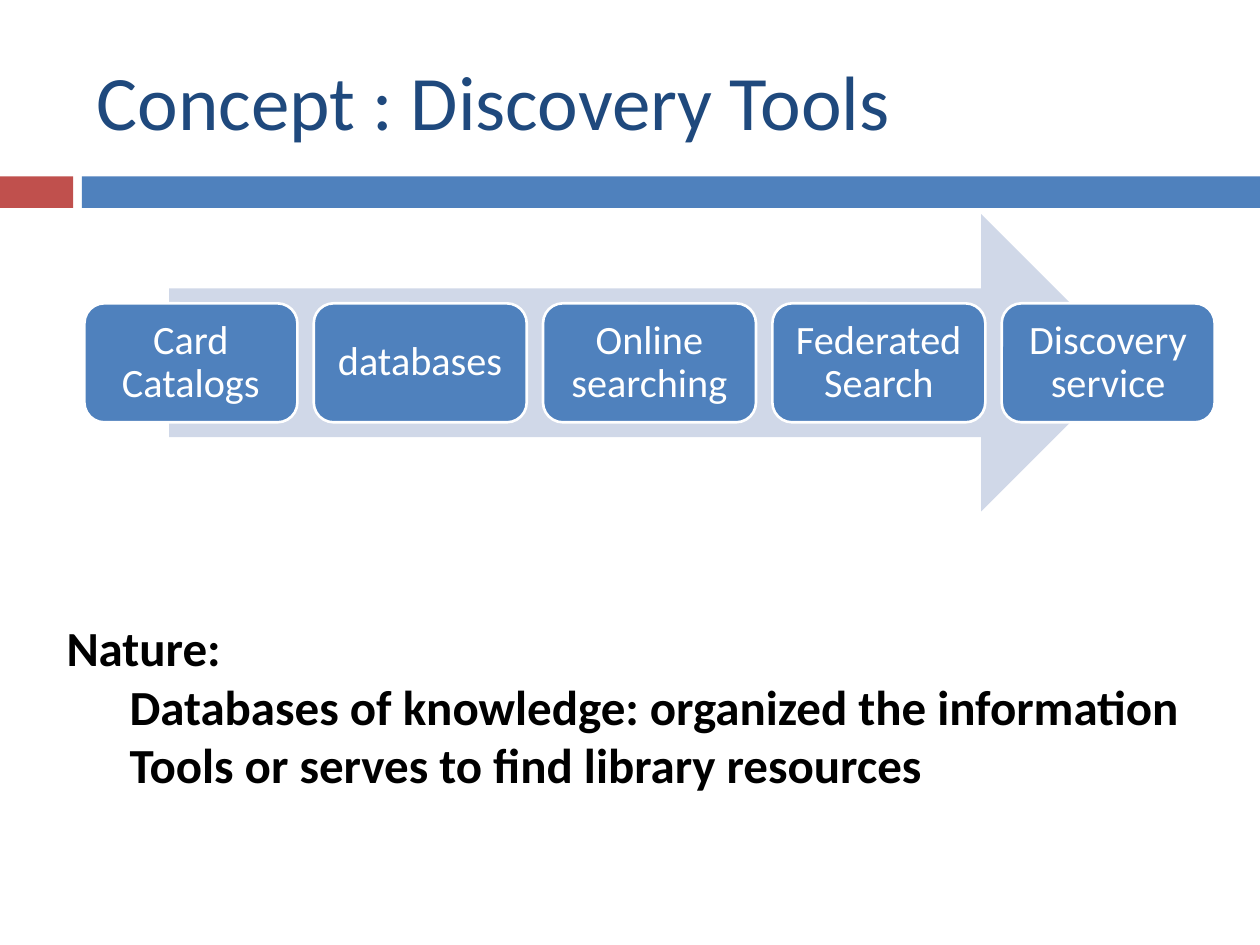
import dataclasses

import pptx
import pptx.dml.color
import pptx.enum.shapes
import pptx.enum.text
import pptx.util

Inches = pptx.util.Inches
SHAPE = pptx.enum.shapes.MSO_SHAPE
ALIGN = pptx.enum.text.PP_ALIGN
ANCHOR = pptx.enum.text.MSO_ANCHOR


@dataclasses.dataclass(frozen=True)
class Theme:
    font: str = "Calibri"
    heading: str = "1F497D"
    accent: str = "C0504D"
    primary: str = "4F81BD"
    arrow: str = "D0D8E8"
    light: str = "FFFFFF"
    body: str = "000000"
    title_size: int = 44
    stage_size: int = 23
    body_size: int = 28
    outline: float = 1.5


THEME = Theme()
WIDTH, HEIGHT = 10, 7.5
STAGES = ["Card Catalogs", "databases", "Online searching",
          "Federated Search", "Discovery service"]
NATURE = [
    ("Nature:", 0),
    ("Databases of knowledge: organized the information", 1),
    ("Tools or serves to find library resources", 1),
]


def rgb(value):
    return pptx.dml.color.RGBColor.from_string(value)


def apply(target, formats):
    for name, value in formats.items():
        setattr(target, name, value)


def add_block(slide, preset, box, fill, outline=None):
    block = slide.shapes.add_shape(preset, *map(Inches, box))
    block.shadow.inherit = False
    block.fill.solid()
    block.fill.fore_color.rgb = rgb(fill)
    if outline:
        block.line.color.rgb = rgb(outline)
        block.line.width = pptx.util.Pt(THEME.outline)
    else:
        block.line.fill.background()
    return block


def write(paragraph, text, size, color, bold=False):
    run = paragraph.add_run()
    run.text = text
    apply(run.font, {"name": THEME.font, "size": pptx.util.Pt(size), "bold": bold})
    run.font.color.rgb = rgb(color)


def add_title(slide, box, text):
    frame = slide.shapes.add_textbox(*map(Inches, box)).text_frame
    apply(frame, {"word_wrap": True, "vertical_anchor": ANCHOR.MIDDLE})
    write(frame.paragraphs[0], text, THEME.title_size, THEME.heading)


def add_band(slide, box, accent_width, gap):
    left, top, width, height = box
    offset = accent_width + gap
    add_block(slide, SHAPE.RECTANGLE, (left, top, accent_width, height), THEME.accent)
    add_block(slide, SHAPE.RECTANGLE,
              (left + offset, top, width - offset, height), THEME.primary)


def add_process(slide, box, stages):
    left, top, width, height = box
    # Arrow behind the stages, 85% of the region's width
    arrow_width = 0.85 * width
    add_block(slide, SHAPE.RIGHT_ARROW,
              (left + (width - arrow_width) / 2, top, arrow_width, height), THEME.arrow)

    # Equal stages, centred on the arrow
    stage_width, stage_height = 1.69, 0.4 * height
    step = (width - stage_width) / (len(stages) - 1)
    stage_top = top + (height - stage_height) / 2
    for column, label in enumerate(stages):
        stage = add_block(slide, SHAPE.ROUNDED_RECTANGLE,
                          (left + column * step, stage_top, stage_width, stage_height),
                          THEME.primary, THEME.light)
        frame = stage.text_frame
        margins = dict.fromkeys(
            ("margin_left", "margin_top", "margin_right", "margin_bottom"), Inches(0.1))
        apply(frame, {"word_wrap": True, "vertical_anchor": ANCHOR.MIDDLE, **margins})
        paragraph = frame.paragraphs[0]
        apply(paragraph, {"alignment": ALIGN.CENTER, "line_spacing": 0.9})
        write(paragraph, label, THEME.stage_size, THEME.light)


def add_nature(slide, box, lines):
    frame = slide.shapes.add_textbox(*map(Inches, box)).text_frame
    frame.word_wrap = True
    for row, (text, level) in enumerate(lines):
        paragraph = frame.add_paragraph() if row else frame.paragraphs[0]
        paragraph.level = level
        # Half an inch of indent per level
        paragraph._p.get_or_add_pPr().set("marL", str(Inches(0.5 * level)))
        write(paragraph, text, THEME.body_size, THEME.body, bold=True)


def main():
    deck = pptx.Presentation()
    apply(deck, {"slide_width": Inches(WIDTH), "slide_height": Inches(HEIGHT)})
    slide = deck.slides.add_slide(deck.slide_layouts[6])

    add_band(slide, (0, 1.4, WIDTH, 0.25), accent_width=0.58, gap=0.07)
    add_title(slide, (0.67, 0.25, 8.92, 1.08), "Concept : Discovery Tools")
    add_process(slide, (0.67, 1.7, 8.97, 2.36), STAGES)
    add_nature(slide, (0.43, 4.85, 9.57, 1.99), NATURE)

    deck.save("out.pptx")


if __name__ == "__main__":
    main()
